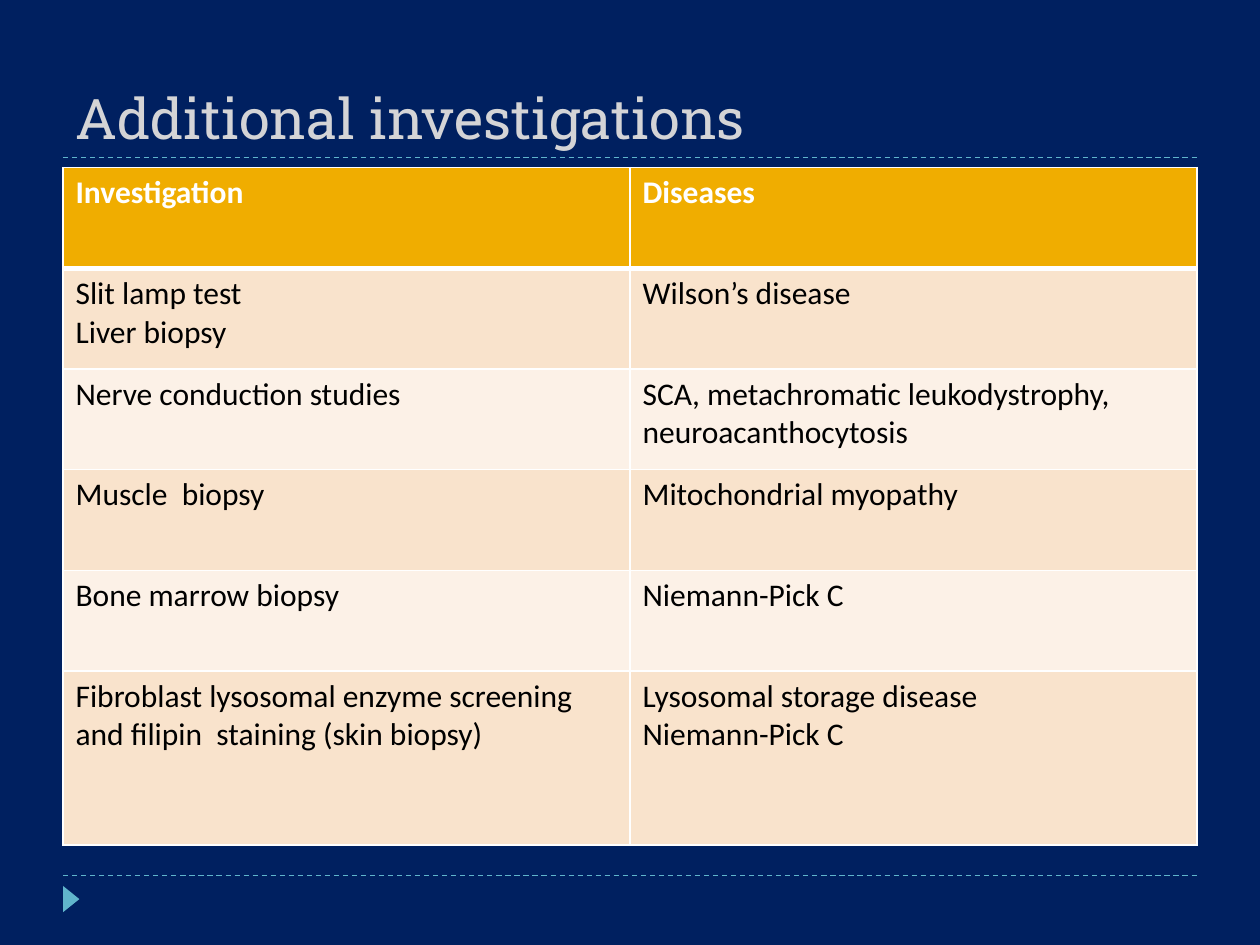
from lxml.etree import SubElement
from pptx import Presentation
from pptx.dml.color import RGBColor
from pptx.enum.dml import MSO_LINE_DASH_STYLE as Dash
from pptx.enum.shapes import MSO_CONNECTOR as Connector, MSO_SHAPE as Shape
from pptx.enum.text import MSO_ANCHOR as Anchor, MSO_AUTO_SIZE as AutoSize, PP_ALIGN as Align
from pptx.oxml.ns import qn
from pptx.util import Cm, Pt

COLORS = {
    "background": "002060",
    "title": "D4D4D6",
    "accent": "60B5CC",
    "header": "F0AD00",
    "odd": "F9E3CC",
    "even": "FCF1E7",
    "white": "FFFFFF",
    "black": "000000",
}
LEFT, WIDTH = 1.27, 22.86
ROW_HEIGHTS = [2.03] * 5 + [3.51]
ROWS = [
    ("Investigation", "Diseases"),
    ("Slit lamp test\nLiver biopsy", "Wilson’s disease"),
    ("Nerve conduction studies",
     "SCA, metachromatic leukodystrophy, neuroacanthocytosis"),
    ("Muscle  biopsy", "Mitochondrial myopathy"),
    ("Bone marrow biopsy", "Niemann-Pick C"),
    ("Fibroblast lysosomal enzyme screening and filipin  staining (skin biopsy)",
     "Lysosomal storage disease\nNiemann-Pick C"),
]


def color(name):
    return RGBColor.from_string(COLORS[name])


class SlideBuilder:
    title_font = "Roboto Slab"
    body_font = "Calibri"

    def __init__(self, slide):
        self.slide = slide
        slide.background.fill.solid()
        slide.background.fill.fore_color.rgb = color("background")

    def style(self, paragraph, name, size, color_name, bold=False):
        font = paragraph.font
        font.name, font.size, font.bold = name, Pt(size), bold
        font.color.rgb = color(color_name)

    def title(self, text, top, height):
        shape = self.slide.shapes.title
        shape.left, shape.top = Cm(LEFT), Cm(top)
        shape.width, shape.height = Cm(WIDTH), Cm(height)
        frame = shape.text_frame
        frame.text = text
        frame.auto_size = AutoSize.NONE
        frame.vertical_anchor = Anchor.BOTTOM
        paragraph = frame.paragraphs[0]
        paragraph.alignment = Align.LEFT
        self.style(paragraph, self.title_font, 32, "title")

    def rule(self, y):
        line = self.slide.shapes.add_connector(
            Connector.STRAIGHT, Cm(LEFT), Cm(y), Cm(LEFT + WIDTH), Cm(y))
        line.line.color.rgb = color("accent")
        line.line.width = Pt(0.75)
        line.line.dash_style = Dash.DASH
        SubElement(line._element.spPr, qn("a:effectLst"))

    def marker(self, left, top, width, height):
        shape = self.slide.shapes.add_shape(
            Shape.ISOSCELES_TRIANGLE, Cm(left), Cm(top), Cm(width), Cm(height))
        shape.rotation = 90
        shape.shadow.inherit = False
        shape.fill.solid()
        shape.fill.fore_color.rgb = color("accent")
        shape.line.fill.background()

    def borders(self, cell, top, bottom):
        properties = cell._tc.get_or_add_tcPr()
        for side, width in (("L", 1), ("R", 1), ("T", top), ("B", bottom)):
            line = SubElement(properties, qn(f"a:ln{side}"), w=str(Pt(width)))
            fill = SubElement(line, qn("a:solidFill"))
            SubElement(fill, qn("a:srgbClr"), val=COLORS["white"])

    def table(self, rows, top, heights):
        columns = len(rows[0])
        table = self.slide.shapes.add_table(
            len(rows), columns, Cm(LEFT), Cm(top), Cm(WIDTH), Cm(sum(heights))).table
        for column in table.columns:
            column.width = Cm(WIDTH / columns)
        for r, texts in enumerate(rows):
            table.rows[r].height = Cm(heights[r])
            is_header = r == 0
            fill_name = "header" if is_header else ("even", "odd")[r % 2]
            for c, text in enumerate(texts):
                cell = table.cell(r, c)
                # Borders come before the fill in the cell properties
                self.borders(cell, 3 if r == 1 else 1, 3 if is_header else 1)
                cell.fill.solid()
                cell.fill.fore_color.rgb = color(fill_name)
                cell.text = text
                for paragraph in cell.text_frame.paragraphs:
                    self.style(paragraph, self.body_font, 18,
                               "white" if is_header else "black", is_header)


def main():
    presentation = Presentation()
    presentation.slide_width, presentation.slide_height = Cm(25.4), Cm(19.05)
    builder = SlideBuilder(
        presentation.slides.add_slide(presentation.slide_layouts[5]))

    # Dashed rules and footer marker
    for y in (17.65, 3.18):
        builder.rule(y)
    builder.marker(1.17, 17.96, 0.53, 0.33)

    # Title and table
    builder.title("Additional investigations", 0.43, 2.74)
    builder.table(ROWS, 3.38, ROW_HEIGHTS)

    presentation.save("out.pptx")


if __name__ == "__main__":
    main()
